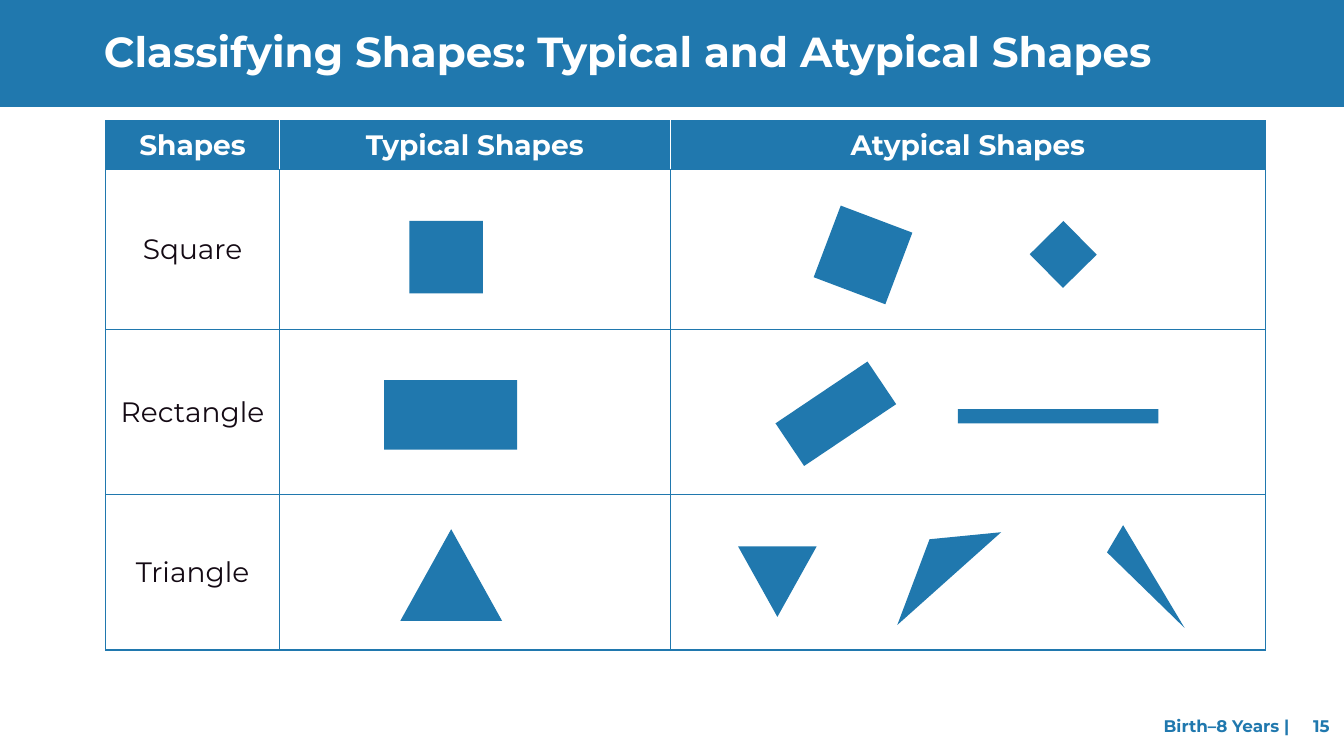
from dataclasses import dataclass

from lxml.etree import SubElement
from pptx import Presentation
from pptx.dml.color import RGBColor
from pptx.enum.shapes import MSO_SHAPE
from pptx.enum.text import MSO_ANCHOR, PP_ALIGN
from pptx.oxml.ns import qn
from pptx.util import Emu, Pt

EMU_PER_PX = 9144  # 100 px to the inch


@dataclass(frozen=True)
class Theme:
    font: str = "Montserrat"
    blue: str = "2078AE"
    white: str = "FFFFFF"
    ink: str = "140A14"
    title_size: int = 30
    table_size: int = 20
    footer_size: int = 12
    border_width: int = 1


THEME = Theme()
HEADERS = ["Shapes", "Typical Shapes", "Atypical Shapes"]
ROW_NAMES = ["Square", "Rectangle", "Triangle"]
COLUMN_WIDTHS = [172, 388, 590]
ROW_HEIGHTS = [48, 159, 164, 154]

SQUARE, TRIANGLE = MSO_SHAPE.RECTANGLE, MSO_SHAPE.ISOSCELES_TRIANGLE
# (preset, box, rotation)
TYPICAL_SHAPES = [
    (SQUARE, (406, 219, 73, 72), 0),
    (SQUARE, (381, 377, 132, 69), 0),
    (TRIANGLE, (397, 525, 101, 91), 0),
]
ATYPICAL_SHAPES = [
    [(SQUARE, (1031, 229, 47, 47), 45.4), (SQUARE, (818, 215, 76, 76), 20.7)],
    [(SQUARE, (950, 406, 199, 14), 0), (SQUARE, (774, 385, 110, 51), 326.1)],
    [(TRIANGLE, (732, 542, 78, 70), 180)],
]
SCALENE_TRIANGLES = [
    [(993, 528), (890, 620), (922, 535)],
    [(1114, 521), (1175, 623), (1098, 548)],
]


def px(value):
    return Emu(value * EMU_PER_PX)


def place(box):
    return [px(value) for value in box]


def style_text(paragraph, size, color, bold, alignment):
    paragraph.alignment = alignment
    font_format = {"name": THEME.font, "size": Pt(size), "bold": bold}
    for name, value in font_format.items():
        setattr(paragraph.font, name, value)
    paragraph.font.color.rgb = RGBColor.from_string(color)


def paint(shape):
    """Fill a shape with plain blue, without outline or shadow."""
    shape.shadow.inherit = False
    shape.fill.solid()
    shape.fill.fore_color.rgb = RGBColor.from_string(THEME.blue)
    shape.line.fill.background()


def add_preset(shapes, preset, box, rotation=0):
    shape = shapes.add_shape(preset, *place(box))
    shape.rotation = rotation
    paint(shape)
    return shape


def add_polygon(shapes, points):
    start, *others = points
    builder = shapes.build_freeform(*start, scale=EMU_PER_PX)
    builder.add_line_segments(others, close=True)
    paint(builder.convert_to_shape())


def add_title(slide, text):
    title = slide.shapes.title
    band = add_preset(slide.shapes, SQUARE, (0, 0, 1333, 106))
    title.element.addprevious(band.element)
    title.left, title.top, title.width, title.height = place((93, 26, 1185, 56))
    frame = title.text_frame
    frame.text = text
    frame.vertical_anchor = MSO_ANCHOR.MIDDLE
    paragraph = frame.paragraphs[0]
    paragraph.line_spacing = 0.9
    style_text(paragraph, THEME.title_size, THEME.white, True, PP_ALIGN.LEFT)


def add_footer(slide, label, number):
    """Set the label and page number against two right-aligned tab stops."""
    frame = slide.shapes.add_textbox(*place((949, 700, 381, 40))).text_frame
    frame.word_wrap = True
    frame.vertical_anchor = MSO_ANCHOR.MIDDLE
    paragraph = frame.paragraphs[0]
    paragraph.text = f"\t{label}\t{number}"
    properties = paragraph._p.get_or_add_pPr()
    tab_list = SubElement(properties, qn("a:tabLst"))
    for position in (320, 360):
        SubElement(tab_list, qn("a:tab"), pos=str(px(position)), algn="r")
    style_text(paragraph, THEME.footer_size, THEME.blue, True, PP_ALIGN.LEFT)


def set_borders(cell, colors):
    """Draw borders from a dict of side letter (L, R, T, B) to colour."""
    properties = cell._tc.get_or_add_tcPr()
    for side, color in colors.items():
        line = SubElement(properties, qn(f"a:ln{side}"), w=str(Pt(THEME.border_width)))
        fill = SubElement(line, qn("a:solidFill"))
        SubElement(fill, qn("a:srgbClr"), val=color)


def format_cell(cell, row, column):
    is_header = row == 0
    colors = dict.fromkeys("LRTB", THEME.blue)
    if is_header and column > 0:
        colors["L"] = THEME.white
    if is_header and column < len(HEADERS) - 1:
        colors["R"] = THEME.white
    set_borders(cell, colors)
    cell.fill.solid()
    cell.fill.fore_color.rgb = RGBColor.from_string(THEME.blue if is_header else THEME.white)
    cell.vertical_anchor = MSO_ANCHOR.MIDDLE
    text_color = THEME.white if is_header else THEME.ink
    style_text(cell.text_frame.paragraphs[0], THEME.table_size, text_color,
               is_header, PP_ALIGN.CENTER)


def add_shape_table(slide):
    box = (105, 120, sum(COLUMN_WIDTHS), sum(ROW_HEIGHTS))
    rows = [HEADERS] + [[name, "", ""] for name in ROW_NAMES]
    table = slide.shapes.add_table(len(rows), len(HEADERS), *place(box)).table
    table.horz_banding = False
    for column, width in zip(table.columns, COLUMN_WIDTHS):
        column.width = px(width)
    for row, height in zip(table.rows, ROW_HEIGHTS):
        row.height = px(height)
    for row_index, texts in enumerate(rows):
        for column_index, text in enumerate(texts):
            cell = table.cell(row_index, column_index)
            cell.text = text
            format_cell(cell, row_index, column_index)


def add_examples(slide):
    for typical, atypical in zip(TYPICAL_SHAPES, ATYPICAL_SHAPES):
        add_preset(slide.shapes, *typical)
        group = slide.shapes.add_group_shape()
        for example in atypical:
            add_preset(group.shapes, *example)
    for points in SCALENE_TRIANGLES:
        add_polygon(group.shapes, points)


def main():
    presentation = Presentation()
    presentation.slide_width, presentation.slide_height = px(1333), px(750)
    slide = presentation.slides.add_slide(presentation.slide_layouts[5])
    add_title(slide, "Classifying Shapes: Typical and Atypical Shapes")
    add_footer(slide, "Birth–8 Years |", 15)
    add_shape_table(slide)
    add_examples(slide)
    presentation.save("out.pptx")


if __name__ == "__main__":
    main()
